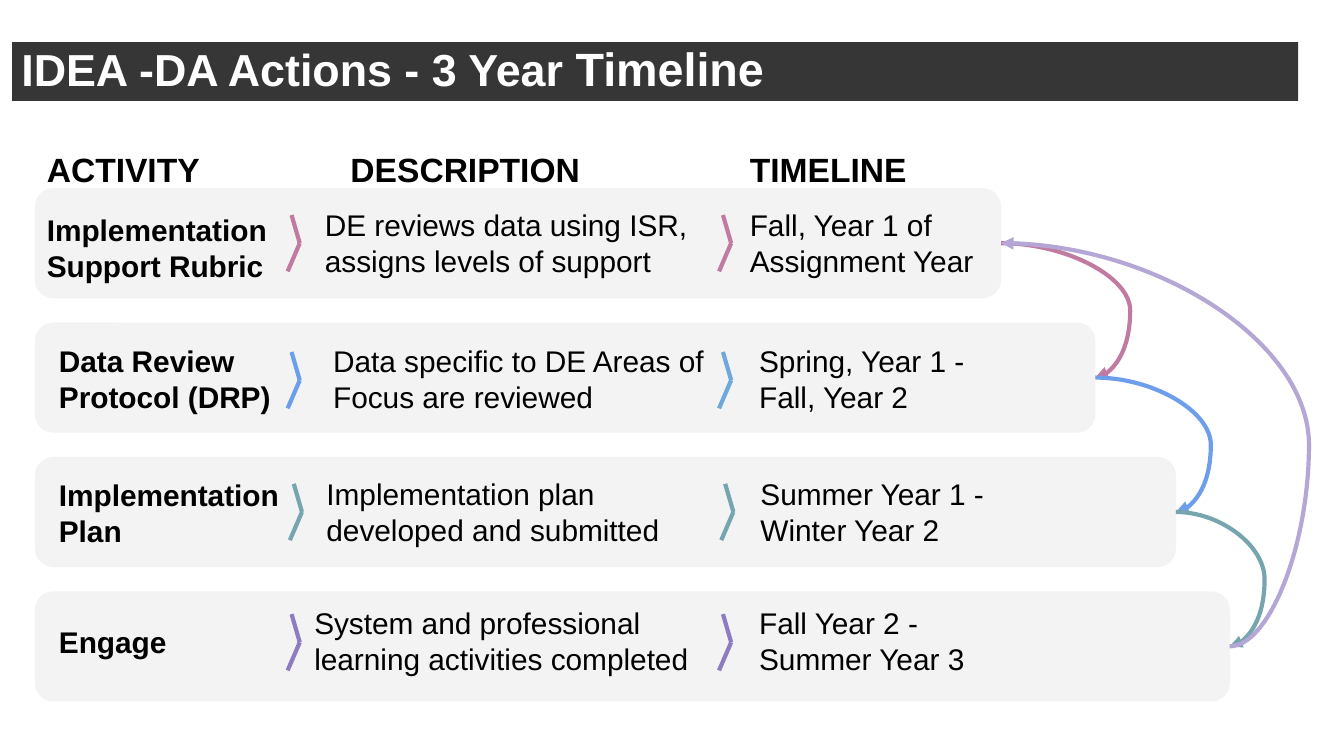
from itertools import pairwise

from lxml.etree import SubElement
from pptx import Presentation
from pptx.dml.color import RGBColor
from pptx.enum.shapes import MSO_CONNECTOR, MSO_SHAPE
from pptx.enum.text import MSO_ANCHOR, PP_ALIGN
from pptx.oxml.ns import qn
from pptx.util import Pt

COLORS = {
    "black": "000000", "white": "FFFFFF", "title": "363636", "bar": "F3F3F3",
    "pink": "C27BA0", "blue": "6D9EEB", "sky": "6FA8DC",
    "teal": "76A5AF", "violet": "8E7CC3", "lilac": "B4A7D6",
}
HEADING = {"size": Pt(18), "bold": True}
ACTIVITY = {"size": Pt(16), "bold": True}
DETAIL = {"size": Pt(16), "bold": False}
TITLE_PARA = {"line_spacing": 0.9, "space_before": Pt(5),
              "space_after": Pt(5), "alignment": PP_ALIGN.LEFT}

BAR_LEFT, BAR_TOP, BAR_HEIGHT, ROW_PITCH = 18.7, 100.8, 59, 72
TEXT_HEIGHT = 54
CHEVRON = [(2.1, 0), (6.5, 15.1), (0, 30.2)]
CHEVRON_GAP = 231.1

HEADINGS = [("ACTIVITY", 18, 136), ("DESCRIPTION", 180.7, 160.5), ("TIMELINE", 394.6, 131)]

ROWS = [
    {"bar": 517.6, "chevron": (154.1, 115.2), "colors": ("pink", "pink"), "cells": [
        (["Implementation", "Support Rubric"], 18, 105.8, 140.4),
        (["DE reviews data using ISR, assigns levels of support"], 167, 103.7, 227.5),
        (["Fall, Year 1 of Assignment Year"], 394.6, 103.7, 140.4)]},
    {"bar": 568.1, "chevron": (154.1, 188.6), "colors": ("blue", "sky"), "cells": [
        (["Data Review Protocol (DRP)"], 24.5, 175.7, 131),
        (["Data specific to DE Areas of Focus are reviewed"], 171.4, 176.4, 223.2),
        (["Spring, Year 1 - Fall, Year 2"], 399.6, 176.4, 140.4)]},
    {"bar": 611.3, "chevron": (155.3, 259.2), "colors": ("teal", "teal"), "cells": [
        (["Implementation", "Plan"], 24.5, 247.7, 136),
        (["Implementation plan developed and submitted"], 167.8, 247.7, 227.5),
        (["Summer Year 1 -", "Winter Year 2"], 400.3, 247.7, 140.4)]},
    {"bar": 640.1, "chevron": (154.1, 329), "colors": ("violet", "violet"), "cells": [
        (["Engage"], 24.5, 316.8, 131),
        (["System and professional", "learning activities completed"], 161.3, 316.8, 234.7),
        (["Fall Year 2 -", "Summer Year 3"], 399.6, 316.8, 140.4)]},
]

ARROWS = [(0, 1, 605.5, "pink"), (1, 2, 648.7, "blue"),
          (2, 3, 677.5, "teal"), (3, 0, 701.3, "lilac")]


def color(name):
    return RGBColor.from_string(COLORS[name])


def apply(target, values):
    for name, value in values.items():
        setattr(target, name, value)


def add_span(para, text, style, ink="black"):
    span = para.add_run()
    span.text = text
    apply(span.font, {"name": "Arial", **style})
    span.font.color.rgb = color(ink)


def set_frame(frame, side, top, anchor):
    apply(frame, {"word_wrap": True, "vertical_anchor": anchor,
                  "margin_left": Pt(side), "margin_right": Pt(side),
                  "margin_top": Pt(top), "margin_bottom": Pt(top)})


def add_text(page, lines, left, top, width, height, style, anchor=MSO_ANCHOR.TOP):
    box = page.shapes.add_textbox(Pt(left), Pt(top), Pt(width), Pt(height))
    frame = box.text_frame
    set_frame(frame, 7.2, 7.2, anchor)
    for index, line in enumerate(lines):
        para = frame.add_paragraph() if index else frame.paragraphs[0]
        add_span(para, line, style)


def add_panel(page, kind, left, top, width, height, fill):
    panel = page.shapes.add_shape(kind, Pt(left), Pt(top), Pt(width), Pt(height))
    panel.shadow.inherit = False
    panel.fill.solid()
    panel.fill.fore_color.rgb = color(fill)
    panel.line.fill.background()
    return panel


def add_line(page, kind, start, end, ink):
    line = page.shapes.add_connector(kind, *[Pt(value) for value in (*start, *end)])
    line.line.width = Pt(2.25)
    line.line.color.rgb = color(ink)
    SubElement(line._element.spPr, qn("a:effectLst"))
    return line


def add_chevron(page, left, top, ink):
    points = [(left + x, top + y) for x, y in CHEVRON]
    for start, end in pairwise(points):
        add_line(page, MSO_CONNECTOR.STRAIGHT, start, end, ink)


def add_curved_arrow(page, start, end, bulge, ink):
    arrow = add_line(page, MSO_CONNECTOR.CURVE, start, end, ink)
    bend = (bulge - start[0]) / (end[0] - start[0])
    properties = arrow._element.spPr
    guides = properties.find(qn("a:prstGeom")).get_or_add_avLst()
    SubElement(guides, qn("a:gd"), name="adj1", fmla=f"val {round(bend * 100000)}")
    SubElement(properties.find(qn("a:ln")), qn("a:tailEnd"), type="triangle")


def add_row(page, index, row):
    add_panel(page, MSO_SHAPE.FLOWCHART_ALTERNATE_PROCESS, BAR_LEFT,
              BAR_TOP + index * ROW_PITCH, row["bar"], BAR_HEIGHT, "bar")
    for column, (lines, left, top, width) in enumerate(row["cells"]):
        style, anchor = (DETAIL, MSO_ANCHOR.TOP) if column else (ACTIVITY, MSO_ANCHOR.MIDDLE)
        add_text(page, lines, left, top, width, TEXT_HEIGHT, style, anchor)
    left, top = row["chevron"]
    for column, ink in enumerate(row["colors"]):
        add_chevron(page, left + column * CHEVRON_GAP, top, ink)


def add_title(page):
    banner = add_panel(page, MSO_SHAPE.RECTANGLE, 6.5, 22.5, 689, 31.6, "title")
    set_frame(banner.text_frame, 5, 2.9, MSO_ANCHOR.MIDDLE)
    para = banner.text_frame.paragraphs[0]
    apply(para, TITLE_PARA)
    for text, size in (("IDEA -DA Actions - 3 Year ", 24), ("Timeline", 25)):
        add_span(para, text, {"size": Pt(size), "bold": True}, "white")


def bar_end(index):
    return BAR_LEFT + ROWS[index]["bar"], BAR_TOP + index * ROW_PITCH + BAR_HEIGHT / 2


def main():
    deck = Presentation()
    apply(deck, {"slide_width": Pt(720), "slide_height": Pt(405)})
    page = deck.slides.add_slide(deck.slide_layouts[6])
    for index, row in enumerate(ROWS):
        add_row(page, index, row)
    for text, left, width in HEADINGS:
        add_text(page, [text], left, 72.7, width, 28, HEADING)
    for source, target, bulge, ink in ARROWS:
        add_curved_arrow(page, bar_end(source), bar_end(target), bulge, ink)
    add_title(page)
    deck.save("out.pptx")


if __name__ == "__main__":
    main()
